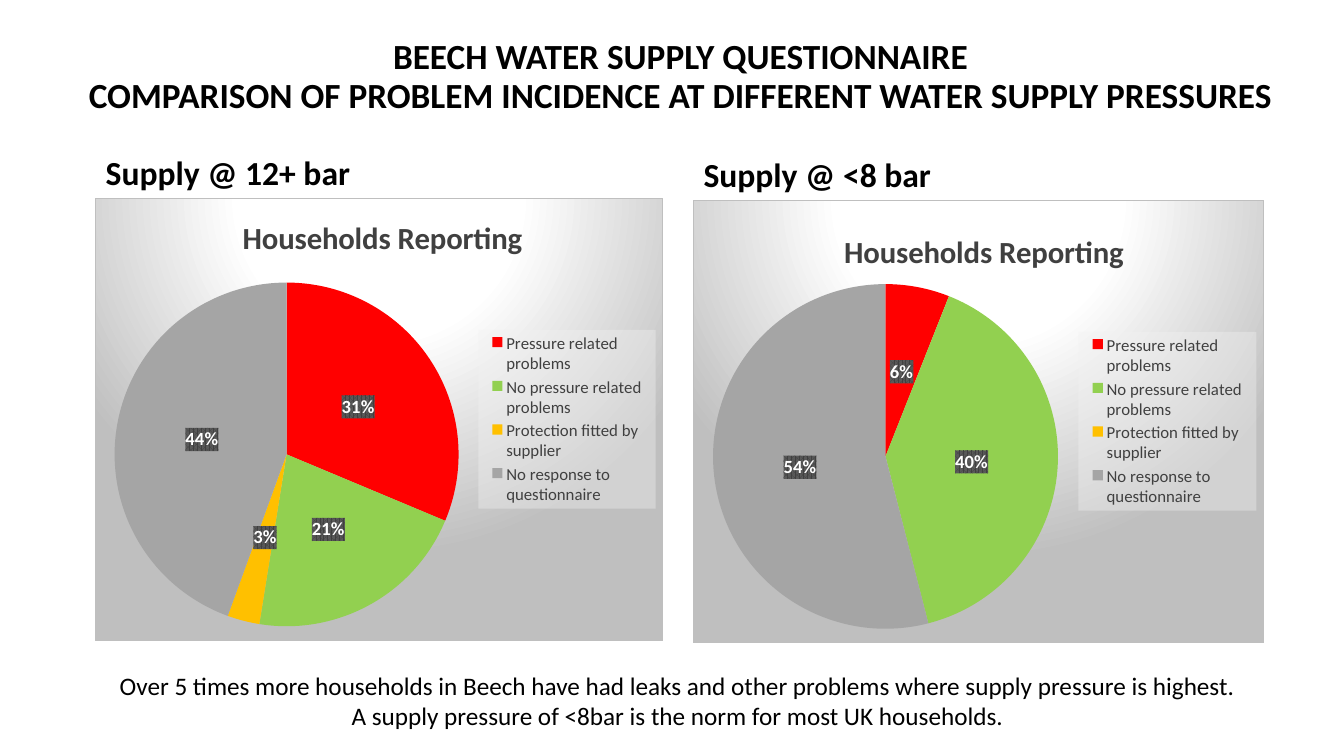
from lxml import etree
from pptx import Presentation
from pptx.chart.data import CategoryChartData
from pptx.dml.color import RGBColor as RGB
from pptx.enum.chart import XL_CHART_TYPE as ChartType
from pptx.enum.chart import XL_LABEL_POSITION as LabelPos
from pptx.enum.chart import XL_LEGEND_POSITION as LegendPos
from pptx.enum.text import MSO_ANCHOR as Anchor
from pptx.enum.text import PP_ALIGN as Align
from pptx.oxml import parse_xml
from pptx.oxml.ns import nsdecls, qn
from pptx.util import Inches, Pt

THEME = {
    "font": "Calibri",
    "ink": RGB.from_string("000000"),
    "soft": RGB.from_string("404040"),
    "label": RGB.from_string("FFFFFF"),
    "slices": ["FF0000", "92D050", "FFC000", "A5A5A5"],
    "title": 25.2, "heading": 24, "body": 18,
    "chart_title": 22, "chart_label": 13.3, "legend": 12, "chart": 10,
}

PANEL_FILL = """<a:gradFill><a:gsLst>
  <a:gs pos="0"><a:srgbClr val="FFFFFF"/></a:gs>
  <a:gs pos="39000"><a:srgbClr val="FFFFFF"/></a:gs>
  <a:gs pos="100000"><a:srgbClr val="BFBFBF"/></a:gs></a:gsLst>
  <a:path path="circle"><a:fillToRect l="50000" t="-80000" r="50000" b="180000"/></a:path>
</a:gradFill><a:ln w="9525"><a:solidFill><a:srgbClr val="BFBFBF"/></a:solidFill></a:ln>"""
LABEL_FILL = """<a:pattFill prst="pct75"><a:fgClr><a:srgbClr val="404040"/></a:fgClr>
  <a:bgClr><a:srgbClr val="595959"/></a:bgClr></a:pattFill>"""
LEGEND_FILL = """<a:solidFill><a:srgbClr val="F2F2F2"><a:alpha val="39000"/></a:srgbClr></a:solidFill>"""

deck = Presentation()
deck.slide_width, deck.slide_height = Inches(13.33), Inches(7.5)
slide = deck.slides.add_slide(deck.slide_layouts[6])


def write(paragraphs, box, size, bold=False, align=Align.LEFT,
          anchor=Anchor.TOP, spacing=None, wrap=True):
    """Add a text box; a newline inside a paragraph is a line break."""
    frame = slide.shapes.add_textbox(*map(Inches, box)).text_frame
    frame.word_wrap, frame.vertical_anchor = wrap, anchor
    for i, text in enumerate(paragraphs):
        para = frame.paragraphs[0] if i == 0 else frame.add_paragraph()
        para.alignment, para.line_spacing = align, spacing
        para.font.size = Pt(size)
        for n, line in enumerate(text.split("\n")):
            if n:
                para.add_line_break()
            run = para.add_run()
            run.text = line
            run.font.name, run.font.size = THEME["font"], Pt(size)
            run.font.bold, run.font.color.rgb = bold, THEME["ink"]


def pin(part, index, **shares):
    """Place a chart part at shares of the chart's width and height."""
    for old in part.findall(qn("c:layout")):
        part.remove(old)
    layout = parse_xml(f'<c:layout {nsdecls("c")}><c:manualLayout/></c:layout>')
    values = {"xMode": "edge", "yMode": "edge", **shares}
    if part.tag == qn("c:plotArea"):
        values = {"layoutTarget": "inner", **values}
    for tag, value in values.items():
        etree.SubElement(layout[0], qn(f"c:{tag}")).set("val", str(value))
    part.insert(index, layout)


# Title
write(["BEECH WATER SUPPLY QUESTIONNAIRE\n"
       "COMPARISON OF PROBLEM INCIDENCE AT DIFFERENT WATER SUPPLY PRESSURES"],
      (0.72, 0.39, 12.06, 0.76), THEME["title"], bold=True,
      align=Align.CENTER, anchor=Anchor.MIDDLE, spacing=0.9)

# One column per supply pressure: heading above a pie chart
answers = ["Pressure related problems", "No pressure related problems",
           "Protection fitted by supplier", "No response to questionnaire"]
heading_height, chart_height = 0.53, 4.4
columns = [
    ("Supply @ 12+ bar", 0.94, 1.96, 5.64, (31, 21, 3, 44), (0.25, 0.03)),
    ("Supply @ <8 bar", 6.87, 1.98, 5.67, (6, 40, None, 54), (0.255, 0.055)),
]
for heading, left, top, width, households, (title_x, title_y) in columns:
    write([heading], (left + 0.01, top - heading_height, width, heading_height),
          THEME["heading"], bold=True, anchor=Anchor.BOTTOM, spacing=0.9)

    data = CategoryChartData()
    data.categories = answers
    data.add_series("Households Reporting", households)
    pie = slide.shapes.add_chart(
        ChartType.PIE, *map(Inches, (left, top, width, chart_height)), data).chart
    pie.font.name, pie.font.size = THEME["font"], Pt(THEME["chart"])
    pie.font.color.rgb = THEME["ink"]

    # Chart title
    pie.has_title = True
    caption = pie.chart_title.text_frame
    caption.text = "Households Reporting"
    caption_font = caption.paragraphs[0].runs[0].font

    # Legend
    pie.has_legend = True
    pie.legend.position = LegendPos.RIGHT
    pie.legend.include_in_layout = False

    # Slices and percentages
    plot = pie.plots[0]
    plot.vary_by_categories = True
    reporting = plot.series[0]
    for i, colour in enumerate(THEME["slices"]):
        fill = reporting.points[i].format.fill
        fill.solid()
        fill.fore_color.rgb = RGB.from_string(colour)
    percents = reporting.data_labels
    percents.show_percentage, percents.show_value = True, False
    percents.number_format, percents.number_format_is_linked = "0%", False
    percents.position = LabelPos.CENTER

    for font, size, colour, bold in (
            (caption_font, "chart_title", "soft", True),
            (pie.legend.font, "legend", "soft", False),
            (percents.font, "chart_label", "label", True)):
        font.name, font.size = THEME["font"], Pt(THEME[size])
        font.color.rgb, font.bold = THEME[colour], bold

    # Placement inside the chart
    space = pie.plots[0]._element.getroottree().getroot()
    body = space.find(qn("c:chart"))
    legend = body.find(qn("c:legend"))
    pin(body.find(qn("c:title")), 1, x=title_x, y=title_y)
    pin(body.find(qn("c:plotArea")), 0, x=0.034, y=0.19, w=0.606, h=0.779)
    pin(legend, 1, x=0.675, y=0.298, w=0.312, h=0.404)

    # Fills of the panel, the legend and the percentages
    labels = next(space.iter(qn("c:ser"))).find(qn("c:dLbls"))
    for text_part, look in ((space.find(qn("c:txPr")), PANEL_FILL),
                            (legend.find(qn("c:txPr")), LEGEND_FILL),
                            (labels.find(qn("c:txPr")), LABEL_FILL)):
        text_part.addprevious(
            parse_xml(f'<c:spPr {nsdecls("c", "a")}>{look}</c:spPr>'))
    body.addprevious(parse_xml(f'<c:roundedCorners {nsdecls("c")} val="0"/>'))

# Conclusion
write(["Over 5 times more households in Beech have had leaks and other problems "
       "where supply pressure is highest.",
       "A supply pressure of <8bar is the norm for most UK households."],
      (1.02, 6.6, 11.4, 0.71), THEME["body"], align=Align.CENTER, wrap=False)

deck.save("out.pptx")
